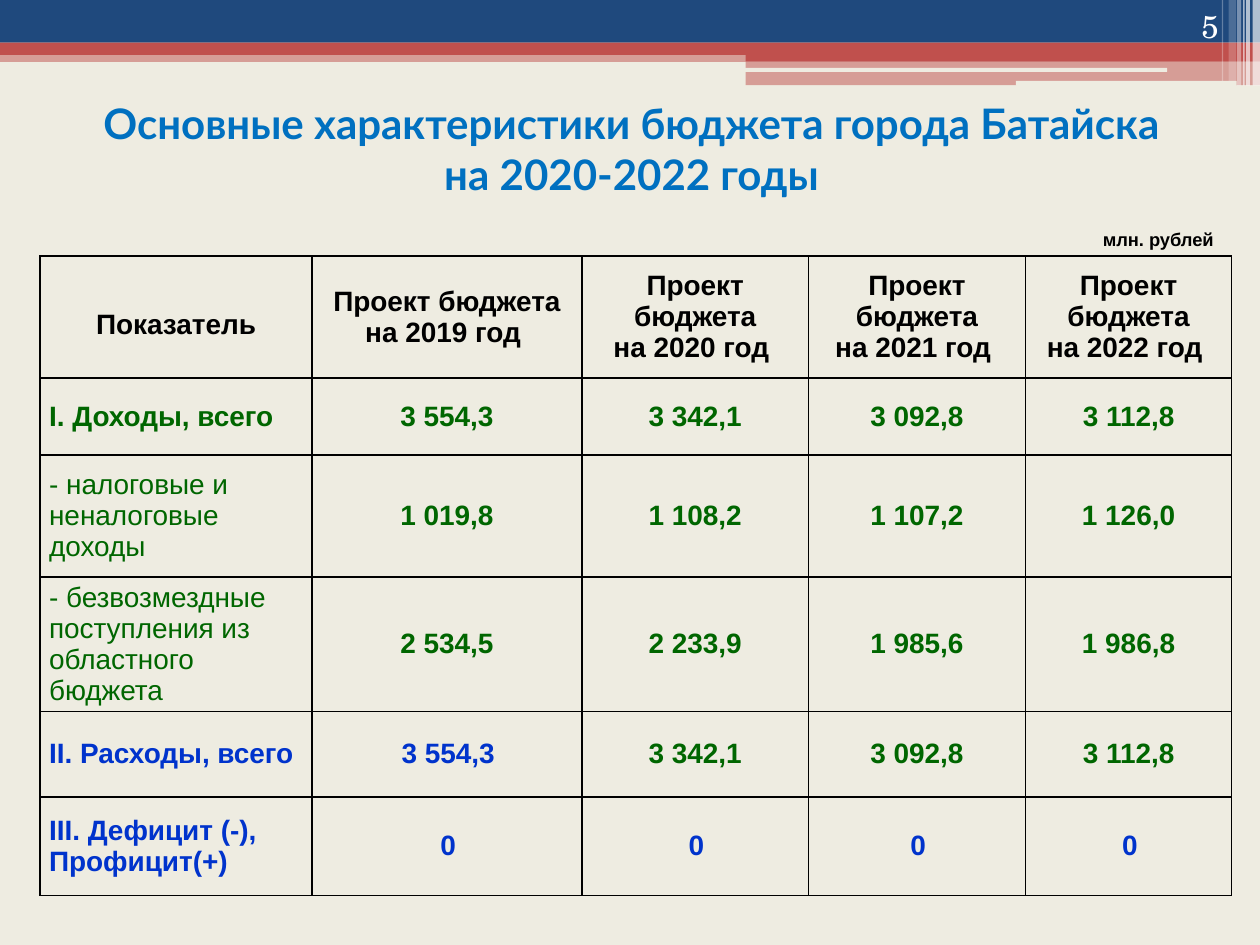
import pptx
import pptx.util
import pptx.dml.color
import pptx.enum.shapes
import pptx.enum.text
import pptx.oxml
import pptx.oxml.ns
from lxml import etree

Cm, Pt = pptx.util.Cm, pptx.util.Pt
RGB = pptx.dml.color.RGBColor.from_string
KIND = pptx.enum.shapes.MSO_SHAPE
ALIGN = pptx.enum.text.PP_ALIGN
ANCHOR = pptx.enum.text.MSO_ANCHOR
qn = pptx.oxml.ns.qn

HUES = {"paper": "EEECE1", "navy": "1F497D", "red": "C0504D", "white": "FFFFFF",
        "black": "000000", "title": "0070C0", "green": "006600", "blue": "0033CC"}


def style(para, size, face, hue, bold, align):
    para.alignment = align
    font = para.font
    font.size, font.name, font.bold = Pt(size), face, bold
    font.color.rgb = RGB(HUES[hue])


def label(text, box, anchor, *look):
    """Add a text box whose paragraph takes the look given to style()."""
    frame = slide.shapes.add_textbox(*map(Cm, box)).text_frame
    frame.word_wrap = True
    frame.vertical_anchor = anchor
    frame.text = text
    style(frame.paragraphs[0], *look)


deck = pptx.Presentation()
deck.slide_width, deck.slide_height = Cm(25.4), Cm(19.05)
slide = deck.slides.add_slide(deck.slide_layouts[6])
slide.background.fill.solid()
slide.background.fill.fore_color.rgb = RGB(HUES["paper"])

# Header bands and stripes: left, top, width, height, colour, opacity in percent
rect, pill = KIND.RECTANGLE, KIND.ROUNDED_RECTANGLE
bands = [
    (rect, 0, 1.02, 25.4, 0.23, "red", 50),
    (rect, 0, 0, 25.4, 0.86, "navy", 100),
    (rect, 0, 0.86, 25.4, 0.25, "red", 100),
    (rect, 15.03, 0.99, 10.37, 0.24, "red", 100),
    (rect, 15.03, 1.23, 10.37, 0.49, "red", 50),
    (pill, 15.01, 1.37, 8.52, 0.08, "paper", 100),
    (pill, 20.48, 1.63, 4.45, 0.1, "paper", 100),
]
stripes = [(25.25, 0.15, 1.73, 65), (25.12, 0.08, 1.73, 65), (25.06, 0.03, 1.73, 60),
           (24.94, 0.08, 1.73, 40), (24.77, 0.15, 1.63, 20), (24.63, 0.03, 1.63, 30)]
bands += [(rect, x, 0, w, h, "white", alpha) for x, w, h, alpha in stripes]

for kind, x, y, w, h, hue, alpha in bands:
    band = slide.shapes.add_shape(kind, Cm(x), Cm(y), Cm(w), Cm(h))
    band.shadow.inherit = False
    band.line.fill.background()
    band.fill.solid()
    band.fill.fore_color.rgb = RGB(HUES[hue])
    if alpha < 100:
        tint = band.fill._xPr.find(".//" + qn("a:srgbClr"))
        etree.SubElement(tint, qn("a:alpha"), val=str(alpha * 1000))

label("Основные характеристики бюджета города Батайска\vна 2020-2022 годы",
      (1.3, 1.88, 22.86, 2.21), ANCHOR.MIDDLE, 24, "Lato", "title", True, ALIGN.CENTER)

# Budget table: one colour letter per column
head = ["Показатель"] + [f"Проект бюджета\nна {year} год " for year in range(2019, 2023)]
rows = [
    ("kkkkk", head),
    ("ggggg", ["I. Доходы, всего", "3 554,3", "3 342,1", "3 092,8", "3 112,8"]),
    ("ggggg", ["- налоговые и неналоговые доходы", "1 019,8", "1 108,2", "1 107,2", "1 126,0"]),
    ("ggggg", ["- безвозмездные поступления из областного бюджета",
               "2 534,5", "2 233,9", "1 985,6", "1 986,8"]),
    ("bbggg", ["II. Расходы, всего", "3 554,3", "3 342,1", "3 092,8", "3 112,8"]),
    ("bbbbb", ["III. Дефицит (-), Профицит(+)", "0", "0", "0", "0"]),
]
inks = {"k": "black", "g": "green", "b": "blue"}
widths = [5.48, 5.44, 4.57, 4.37, 4.16]
heights = [2.46, 1.55, 2.46, 2.5, 1.73, 1.98]

table = slide.shapes.add_table(len(rows), len(widths), Cm(0.81), Cm(5.16),
                               Cm(sum(widths)), Cm(sum(heights))).table
table.first_row = table.horz_banding = False
for col, width in zip(table.columns, widths):
    col.width = Cm(width)
for row, height in zip(table.rows, heights):
    row.height = Cm(height)

for r, (code, texts) in enumerate(rows):
    for c, text in enumerate(texts):
        cell = table.cell(r, c)
        cell.text = text
        cell.vertical_anchor = ANCHOR.MIDDLE
        cell.margin_left = cell.margin_right = Cm(0.18)
        cell.margin_top = cell.margin_bottom = 0
        align = ALIGN.LEFT if r and not c else ALIGN.CENTER
        for para in cell.text_frame.paragraphs:
            style(para, 16, "Arial", inks[code[c]], not text.startswith("-"), align)
            if bool(r) == bool(c):
                shift = 0.05 if code[c] == "b" else -0.18
                para._p.get_or_add_pPr().set("indent", str(Cm(shift)))
        props = cell._tc.get_or_add_tcPr()
        for side in ("lnL", "lnR", "lnT", "lnB"):
            edge = etree.SubElement(props, qn("a:" + side), w=str(Pt(1)))
            paint = etree.SubElement(edge, qn("a:solidFill"))
            etree.SubElement(paint, qn("a:srgbClr"), val=HUES["black"])
        cell.fill.background()
table.cell(0, 0).text_frame.paragraphs[0].line_spacing = 1.5

label("млн. рублей", (21.11, 4.47, 3.61, 0.71), ANCHOR.TOP,
      10.5, "Arial", "black", True, ALIGN.RIGHT)
label("5", (22.71, 0, 2.11, 1.02), ANCHOR.BOTTOM,
      18, "TeX Gyre Schola", "white", False, ALIGN.RIGHT)

deck.save("out.pptx")
